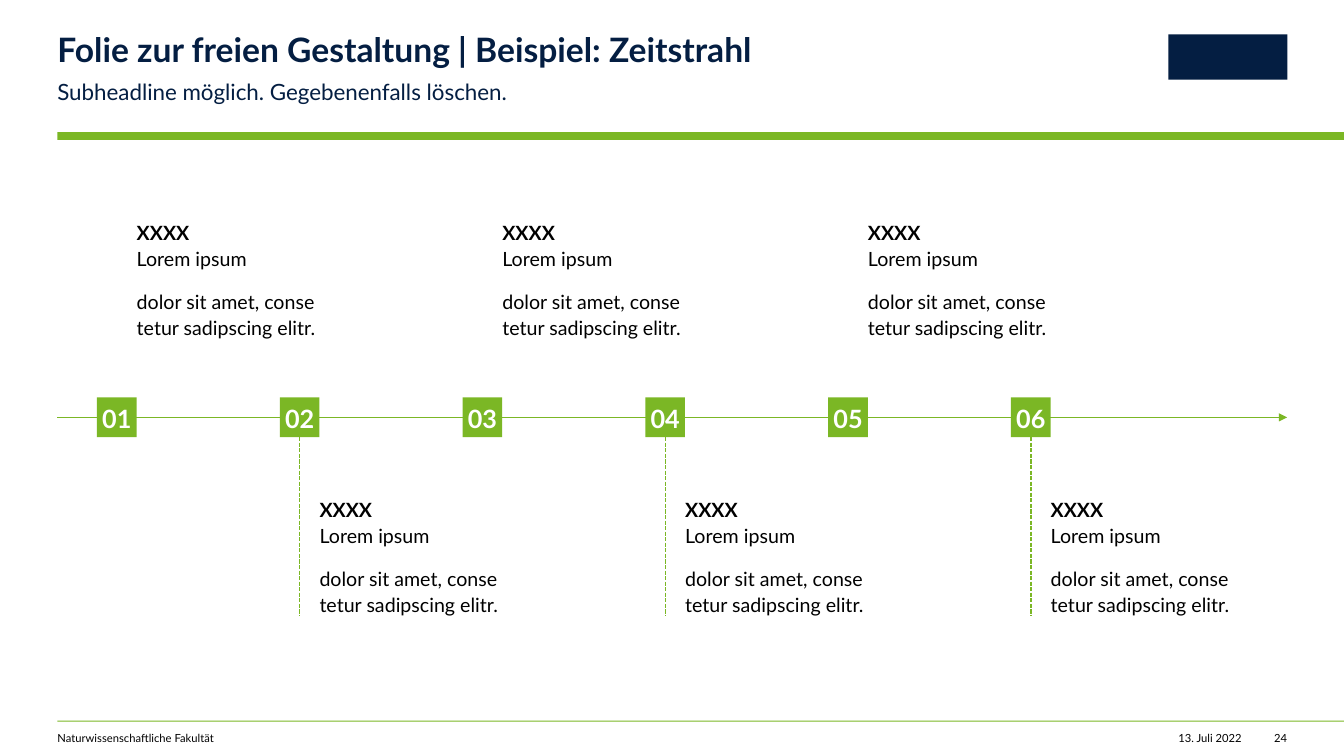
import copy

import pptx
import pptx.dml.color
import pptx.enum.dml
import pptx.enum.shapes
import pptx.enum.text
import pptx.oxml
import pptx.oxml.ns
import pptx.util

Pt = pptx.util.Pt
ALIGN = pptx.enum.text.PP_ALIGN
COLORS = {"green": "7BB725", "navy": "041E42", "black": "000000", "white": "FFFFFF"}

LEFT, RIGHT, SLIDE_WIDTH, SLIDE_HEIGHT = 41, 919.4, 960, 540
AXIS_Y = 298.1
MARKER_SIZE = 28.35
FIRST_MARKER, MARKER_PITCH = 69.3, 130.57
ENTRY_TOP_ABOVE, ENTRY_TOP_BELOW = 156.2, 354.2
ENTRY_WIDTH, ENTRY_HEIGHT = 140.4, 85
ENTRY = ["XXXX\nLorem ipsum", "dolor sit amet, conse\ntetur sadipscing elitr."]


class SlideBuilder:
    def __init__(self, slide, font="Lato"):
        self.slide = slide
        self.font = font

    def color(self, name):
        return pptx.dml.color.RGBColor.from_string(COLORS[name])

    def fill_text(self, shape, paragraphs, size, color, bold=False, align=ALIGN.LEFT,
                  spacing=1.0, after=0, right_inset=0):
        frame = shape.text_frame
        frame.word_wrap = True
        frame.margin_left = frame.margin_top = frame.margin_bottom = 0
        frame.margin_right = Pt(right_inset)
        for index, text in enumerate(paragraphs):
            paragraph = frame.paragraphs[0] if index == 0 else frame.add_paragraph()
            paragraph.text = text
            paragraph.alignment = align
            paragraph.line_spacing = spacing
            paragraph.space_after = Pt(after)
            for run in paragraph.runs:
                run.font.name = self.font
                run.font.size = Pt(size)
                run.font.bold = bold
                run.font.color.rgb = self.color(color)
            # Line breaks need the run's size, or they stretch the line.
            for line_break in paragraph._p.findall(pptx.oxml.ns.qn("a:br")):
                line_break.append(copy.deepcopy(paragraph.runs[0]._r.rPr))
        return frame

    def text(self, left, top, width, height, paragraphs, size, color="black", **style):
        box = self.slide.shapes.add_textbox(Pt(left), Pt(top), Pt(width), Pt(height))
        return self.fill_text(box, paragraphs, size, color, **style)

    def rectangle(self, left, top, width, height, color):
        shape = self.slide.shapes.add_shape(
            pptx.enum.shapes.MSO_SHAPE.RECTANGLE, Pt(left), Pt(top), Pt(width), Pt(height))
        shape.shadow.inherit = False
        shape.fill.solid()
        shape.fill.fore_color.rgb = self.color(color)
        shape.line.fill.background()
        return shape

    def line(self, start, end, dashed=False, arrow=False):
        connector = self.slide.shapes.add_connector(
            pptx.enum.shapes.MSO_CONNECTOR.STRAIGHT, *map(Pt, start + end))
        connector.line.color.rgb = self.color("green")
        connector.line.width = Pt(1)
        if dashed:
            connector.line.dash_style = pptx.enum.dml.MSO_LINE.SQUARE_DOT
            preset = connector.line._ln.find(pptx.oxml.ns.qn("a:prstDash"))
            preset.set("val", "sysDash")
        if arrow:
            connector.line._ln.append(pptx.oxml.parse_xml(
                f'<a:tailEnd {pptx.oxml.ns.nsdecls("a")} type="triangle"/>'))
        connector._element.spPr.append(
            pptx.oxml.parse_xml(f'<a:effectLst {pptx.oxml.ns.nsdecls("a")}/>'))

    def marker(self, left, label):
        square = self.rectangle(left, AXIS_Y - MARKER_SIZE / 2, MARKER_SIZE, MARKER_SIZE, "green")
        frame = self.fill_text(square, [label], 18, "white", bold=True, align=ALIGN.CENTER,
                               spacing=1.1, after=12)
        frame.vertical_anchor = pptx.enum.text.MSO_ANCHOR.MIDDLE

    def entry(self, left, top):
        frame = self.text(left, top, ENTRY_WIDTH, ENTRY_HEIGHT, ENTRY, 14, spacing=1.1, after=12)
        frame.paragraphs[0].runs[0].font.bold = True


def main():
    presentation = pptx.Presentation()
    presentation.slide_width = Pt(SLIDE_WIDTH)
    presentation.slide_height = Pt(SLIDE_HEIGHT)
    builder = SlideBuilder(presentation.slides.add_slide(presentation.slide_layouts[6]))

    # Header and footer
    builder.rectangle(LEFT, 94.3, SLIDE_WIDTH - LEFT, 5.7, "green")
    builder.rectangle(LEFT, 514.8, SLIDE_WIDTH - LEFT, 0.7, "green")
    builder.rectangle(834.5, 24.5, 85, 32.4, "navy")
    builder.text(LEFT, 23.8, 539.3, 26, ["Folie zur freien Gestaltung | Beispiel: Zeitstrahl"],
                 24, "navy", bold=True, spacing=0.9)
    builder.text(LEFT, 54, 539.3, 19.4, ["Subheadline möglich. Gegebenenfalls löschen."],
                 16, "navy", spacing=1.1, after=12, right_inset=28)
    builder.text(LEFT, 522.7, 430, 9.6, ["Naturwissenschaftliche Fakultät"], 8)
    builder.text(827, 522.7, 60, 9.6, ["13. Juli 2022"], 8, align=ALIGN.RIGHT)
    builder.text(RIGHT - 20, 522.7, 20, 9.6, ["24"], 8, align=ALIGN.RIGHT)

    # Timeline: odd steps are described above the axis, even steps below
    builder.line((LEFT, AXIS_Y), (RIGHT, AXIS_Y), arrow=True)
    for step in range(1, 7):
        left = FIRST_MARKER + (step - 1) * MARKER_PITCH
        center = left + MARKER_SIZE / 2
        below = step % 2 == 0
        builder.marker(left, f"{step:02d}")
        builder.entry(left + MARKER_SIZE, ENTRY_TOP_BELOW if below else ENTRY_TOP_ABOVE)
        if below:
            builder.line((center, AXIS_Y + MARKER_SIZE / 2), (center, 440), dashed=True)

    presentation.save("out.pptx")


if __name__ == "__main__":
    main()
